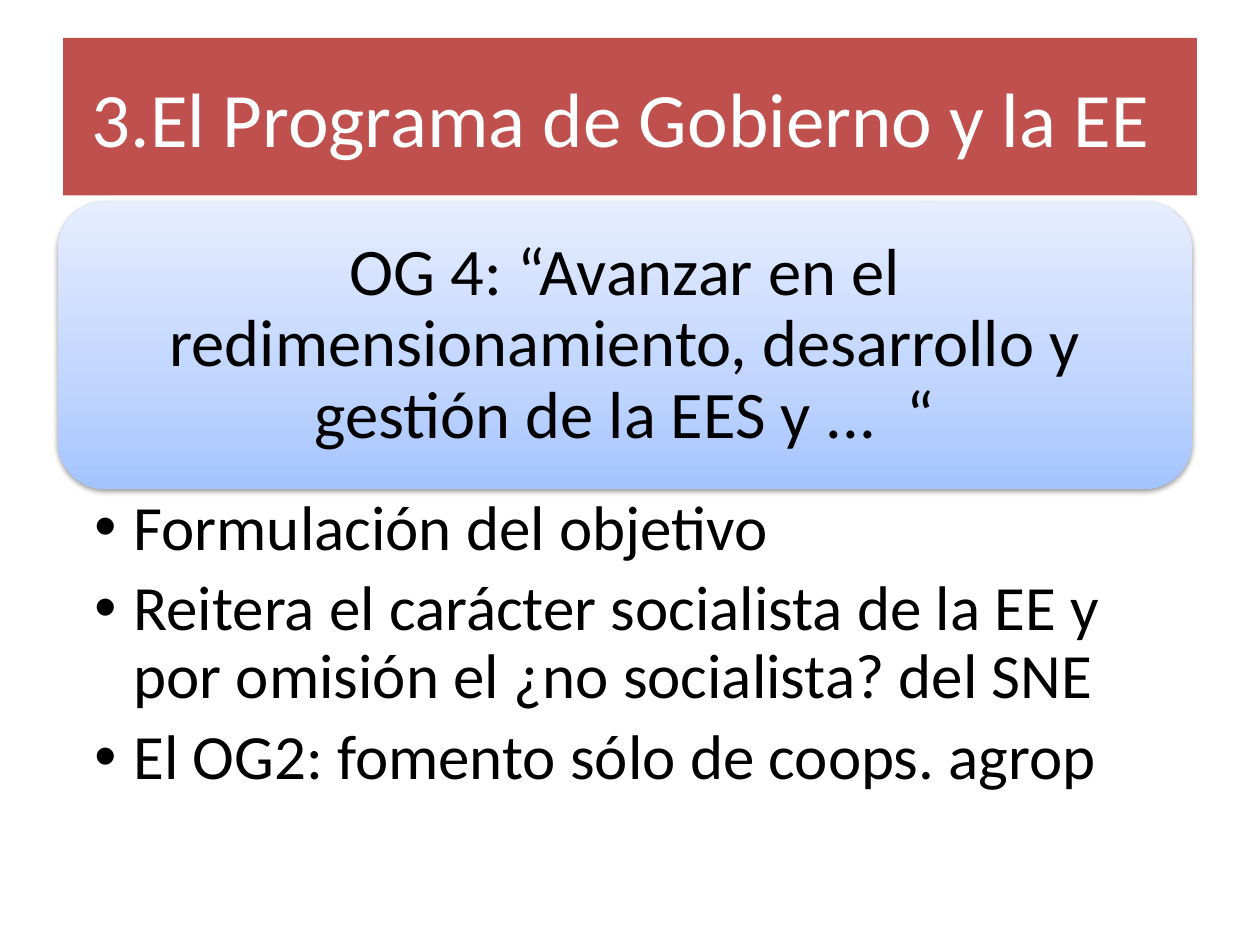
from copy import deepcopy

from lxml import etree
from pptx import Presentation
from pptx.dml.color import RGBColor
from pptx.enum.shapes import MSO_SHAPE
from pptx.enum.text import MSO_ANCHOR, PP_ALIGN
from pptx.oxml.ns import qn
from pptx.util import Inches, Pt

ROUNDED = MSO_SHAPE.ROUNDED_RECTANGLE
MIDDLE, TOP = MSO_ANCHOR.MIDDLE, MSO_ANCHOR.TOP
CENTER, LEFT = PP_ALIGN.CENTER, PP_ALIGN.LEFT

WIDTH, HEIGHT = Inches(10), Inches(7.5)
FONT = "Calibri"
RED, WHITE, BLACK = "C0504D", "FFFFFF", "000000"
BLUES = [(0, "A4C4FF"), (0.35, "BFD4FF"), (1, "E6EEFF")]
BULLET_INDENT = Inches(0.31)

TITLE = "3.El Programa de Gobierno y la EE "
OBJECTIVE = "OG 4: “Avanzar en el redimensionamiento, desarrollo y gestión de la EES y ...  “"
REMARKS = [
    "Formulación del objetivo",
    "Reitera el carácter socialista de la EE y por omisión el ¿no socialista? del SNE",
    "El OG2: fomento sólo de coops. agrop",
]


def color(hex_value):
    return RGBColor.from_string(hex_value)


def share(left, top, width, height):
    return (round(WIDTH * left), round(HEIGHT * top),
            round(WIDTH * width), round(HEIGHT * height))


def add_bullet(paragraph):
    properties = paragraph._p.get_or_add_pPr()
    properties.set("marL", str(BULLET_INDENT))
    properties.set("indent", str(-BULLET_INDENT))
    etree.SubElement(properties, qn("a:buFont"), typeface="Arial")
    etree.SubElement(properties, qn("a:buChar"), char="•")


def write(frame, lines, size, ink=BLACK, align=LEFT, anchor=TOP,
          insets=(0.1, 0.05), spacing=None, after=0, bulleted=False):
    frame.word_wrap = True
    frame.vertical_anchor = anchor
    frame.margin_left = frame.margin_right = Inches(insets[0])
    frame.margin_top = frame.margin_bottom = Inches(insets[1])
    for index, line in enumerate(lines):
        paragraph = frame.paragraphs[0] if index == 0 else frame.add_paragraph()
        if bulleted:
            add_bullet(paragraph)
        paragraph.alignment = align
        paragraph.line_spacing = spacing
        paragraph.space_after = Pt(after)
        run = paragraph.add_run()
        run.text = line
        run.font.name = FONT
        run.font.size = Pt(size)
        run.font.color.rgb = color(ink)


def fill_gradient(shape, stops, angle):
    shape.fill.gradient()
    shape.fill.gradient_angle = angle
    stop_list = shape._element.spPr.find(".//" + qn("a:gsLst"))
    stop_list.append(deepcopy(stop_list[-1]))
    for stop, (position, tint) in zip(shape.fill.gradient_stops, stops):
        stop.position = position
        stop.color.rgb = color(tint)


def add_shadow(shape, blur, distance, opacity):
    shape.shadow.inherit = False
    effects = shape._element.spPr.find(qn("a:effectLst"))
    shadow = etree.SubElement(effects, qn("a:outerShdw"), blurRad=str(Pt(blur)),
                              dist=str(Pt(distance)), dir="5400000", rotWithShape="0")
    tint = etree.SubElement(shadow, qn("a:srgbClr"), val=BLACK)
    etree.SubElement(tint, qn("a:alpha"), val=str(opacity * 1000))


def place_title(slide, box):
    title = slide.shapes.title
    title.left, title.top, title.width, title.height = box
    title.fill.solid()
    title.fill.fore_color.rgb = color(RED)
    write(title.text_frame, [TITLE], 44, ink=WHITE, align=CENTER, anchor=MIDDLE)


def place_objective(slide, box):
    card = slide.shapes.add_shape(ROUNDED, *box)
    card.line.fill.background()
    fill_gradient(card, BLUES, 90)
    add_shadow(card, 3.1, 1.6, 38)
    write(card.text_frame, [OBJECTIVE], 38, align=CENTER, anchor=MIDDLE,
          insets=(0.16, 0.16), spacing=0.9)


def place_remarks(slide, box):
    remarks = slide.shapes.add_textbox(*box)
    write(remarks.text_frame, REMARKS, 36, insets=(0.29, 0.05),
          spacing=0.9, after=7.2, bulleted=True)


def main():
    deck = Presentation()
    deck.slide_width, deck.slide_height = WIDTH, HEIGHT
    slide = deck.slides.add_slide(deck.slide_layouts[5])
    place_title(slide, share(0.05, 0.04, 0.9, 1 / 6))
    place_objective(slide, share(0.046, 0.213, 0.9, 0.305))
    place_remarks(slide, share(0.046, 0.518, 0.9, 0.344))
    deck.save("out.pptx")


if __name__ == "__main__":
    main()
